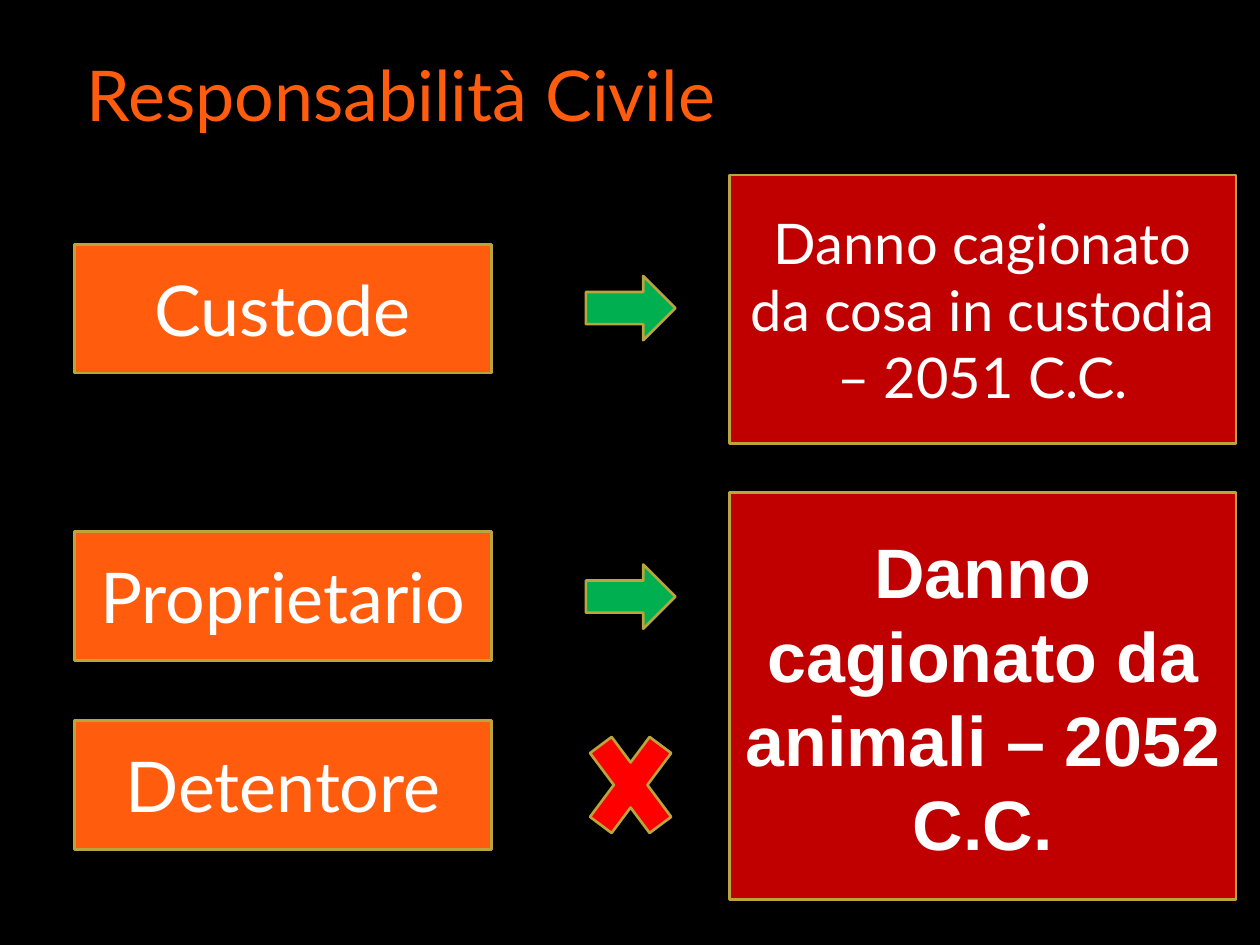
from dataclasses import dataclass

from pptx import Presentation
from pptx.dml.color import RGBColor
from pptx.enum.shapes import MSO_SHAPE
from pptx.enum.text import MSO_ANCHOR, PP_ALIGN
from pptx.util import Inches, Pt

RECTANGLE = MSO_SHAPE.RECTANGLE
RIGHT_ARROW = MSO_SHAPE.RIGHT_ARROW
MULTIPLY = MSO_SHAPE.MATH_MULTIPLY
MIDDLE = MSO_ANCHOR.MIDDLE
CENTER = PP_ALIGN.CENTER

COLORS = {
    "black": "000000",
    "orange": "FF5D0D",
    "red": "C00000",
    "cross": "FF0000",
    "green": "00B050",
    "gold": "BAA53D",
    "white": "FFFFFF",
}
ROLE_LEFT, ROLE_WIDTH, ROLE_HEIGHT = 0.59, 3.31, 1.02
DAMAGE_LEFT, DAMAGE_WIDTH = 5.79, 4.02


@dataclass
class Block:
    left: float
    top: float
    width: float
    height: float
    fill: str
    text: str = ""
    size: int = 40
    font: str = "Lato"
    bold: bool = False
    kind: MSO_SHAPE = RECTANGLE
    line: str = "gold"
    line_width: float = 1.5


def role(top: float, text: str) -> Block:
    """Describe a box naming a responsible person."""
    return Block(ROLE_LEFT, top, ROLE_WIDTH, ROLE_HEIGHT, "orange", text)


def arrow(top: float) -> Block:
    """Describe an arrow leading from a person to a damage."""
    return Block(4.65, top, 0.71, 0.51, "green", kind=RIGHT_ARROW)


BLOCKS = [
    Block(0, 0, 10, 7.5, "black", line="black", line_width=0.75),
    role(1.94, "Custode"),
    role(4.22, "Proprietario"),
    role(5.72, "Detentore"),
    arrow(2.19),
    arrow(4.48),
    Block(DAMAGE_LEFT, 1.39, DAMAGE_WIDTH, 2.13, "red",
          "Danno cagionato da cosa in custodia – 2051 C.C.", size=32),
    Block(DAMAGE_LEFT, 3.91, DAMAGE_WIDTH, 3.23, "red",
          "Danno cagionato da animali – 2052 C.C.", font="Arial", bold=True),
    Block(4.55, 5.62, 0.91, 1.22, "cross", kind=MULTIPLY),
]


def color(name: str) -> RGBColor:
    """Return the named colour."""
    return RGBColor.from_string(COLORS[name])


def write(shape, text: str, size: int, font: str, bold: bool, ink: str) -> None:
    """Set a shape's text and format its run."""
    shape.text_frame.text = text
    run = shape.text_frame.paragraphs[0].runs[0]
    run.font.size = Pt(size)
    run.font.name = font
    run.font.bold = bold
    run.font.color.rgb = color(ink)


def draw_block(slide, block: Block) -> None:
    """Draw a filled shape with its centred text."""
    shape = slide.shapes.add_shape(
        block.kind, Inches(block.left), Inches(block.top),
        Inches(block.width), Inches(block.height))
    shape.shadow.inherit = False
    shape.fill.solid()
    shape.fill.fore_color.rgb = color(block.fill)
    shape.line.color.rgb = color(block.line)
    shape.line.width = Pt(block.line_width)
    if block.text:
        write(shape, block.text, block.size, block.font, block.bold, "white")
        shape.text_frame.word_wrap = True
        shape.text_frame.vertical_anchor = MIDDLE
        shape.text_frame.paragraphs[0].alignment = CENTER


def draw_title(slide) -> None:
    """Draw the slide's title."""
    title = slide.shapes.add_textbox(
        Inches(ROLE_LEFT), Inches(0.36), Inches(5.83), Inches(0.77))
    title.text_frame.word_wrap = True
    write(title, "Responsabilità Civile", 40, "Lato", False, "orange")


def main() -> None:
    """Build and save the presentation."""
    presentation = Presentation()
    presentation.slide_width = Inches(10)
    presentation.slide_height = Inches(7.5)
    slide = presentation.slides.add_slide(presentation.slide_layouts[6])
    for block in BLOCKS:
        draw_block(slide, block)
    draw_title(slide)
    presentation.save("out.pptx")


if __name__ == "__main__":
    main()
